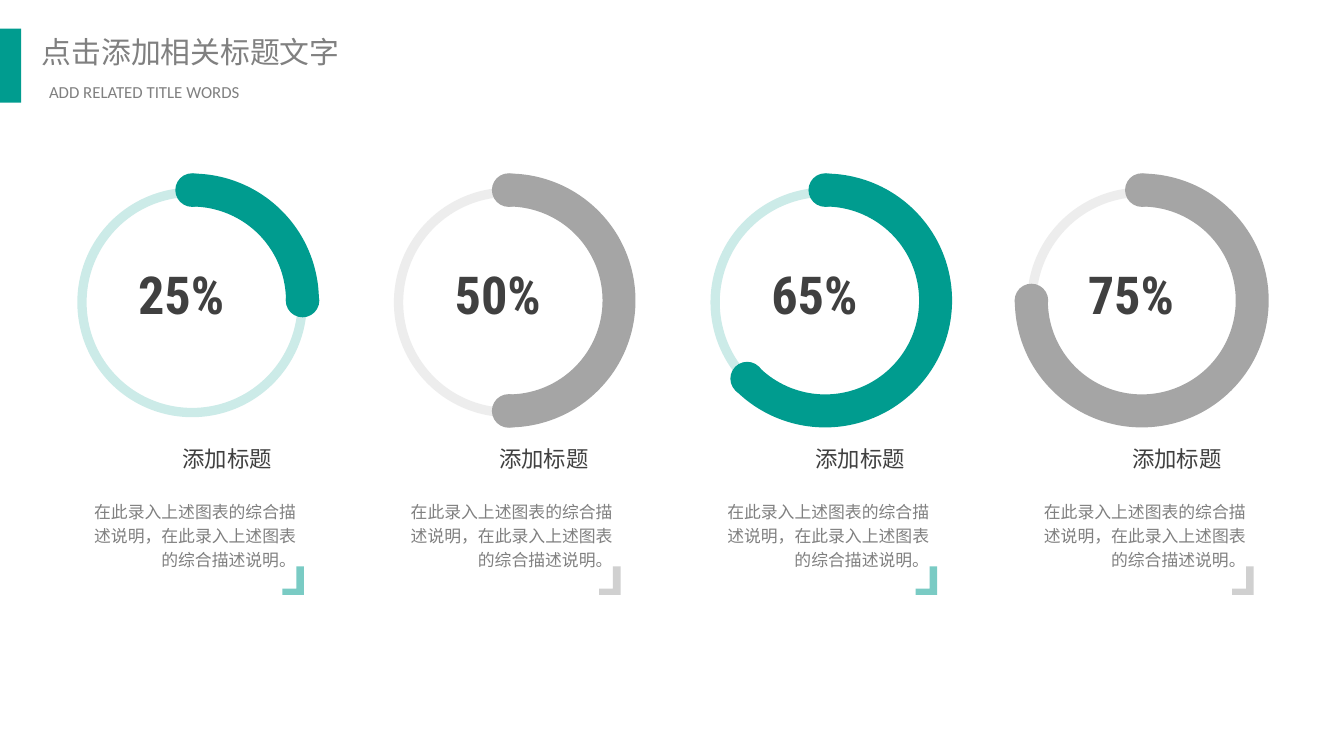
import math
from dataclasses import dataclass

import pptx
import pptx.dml.color
import pptx.enum.shapes
import pptx.enum.text
import pptx.oxml
import pptx.oxml.ns
import pptx.util

Pt = pptx.util.Pt
RGB = pptx.dml.color.RGBColor.from_string
SHAPE = pptx.enum.shapes.MSO_SHAPE
ALIGN = pptx.enum.text.PP_ALIGN
qn = pptx.oxml.ns.qn


@dataclass(frozen=True)
class Theme:
    teal: str = "009C8F"
    gray: str = "A5A5A5"
    dark: str = "404040"
    muted: str = "808080"
    chinese: str = "Noto Sans CJK SC"
    latin: str = "Calibri"
    number: str = "Roboto Condensed"
    title_size: float = 16
    number_size: float = 28
    heading_size: float = 12
    body_size: float = 9


def set_alpha(color_format_owner, percent):
    """Make every solid colour inside an XML element translucent."""
    for color in color_format_owner.iter(qn("a:srgbClr")):
        alpha = color.makeelement(qn("a:alpha"), {"val": str(percent * 1000)})
        color.append(alpha)


class SlideBuilder:
    def __init__(self, slide, theme):
        self.slide = slide
        self.theme = theme
        self.shapes = slide.shapes

    def start_group(self):
        self.shapes = self.slide.shapes.add_group_shape().shapes

    def end_group(self):
        self.shapes = self.slide.shapes

    def solid(self, kind, left, top, width, height, color, adjustments=(),
              alpha=None, rotation=0):
        shape = self.shapes.add_shape(kind, Pt(left), Pt(top), Pt(width), Pt(height))
        shape.shadow.inherit = False
        shape.rotation = rotation
        shape.fill.solid()
        shape.fill.fore_color.rgb = RGB(color)
        shape.line.fill.background()
        for index, value in enumerate(adjustments):
            shape.adjustments[index] = value
        if alpha is not None:
            set_alpha(shape.fill._xPr, alpha)

    def ring(self, center_x, center_y, diameter, color):
        shape = self.shapes.add_shape(
            SHAPE.OVAL, Pt(center_x - diameter / 2), Pt(center_y - diameter / 2),
            Pt(diameter), Pt(diameter))
        shape.shadow.inherit = False
        shape.fill.background()
        shape.line.width = Pt(5)
        shape.line.color.rgb = RGB(color)
        set_alpha(shape.line._get_or_add_ln(), 20)

    def arc(self, center_x, center_y, diameter, end_angle, color):
        """Thick clockwise arc from twelve o'clock with a round cap at each end."""
        thickness = 0.13
        start_angle = 270
        self.solid(SHAPE.BLOCK_ARC, center_x - diameter / 2, center_y - diameter / 2,
                   diameter, diameter, color,
                   (start_angle * 0.6, end_angle * 0.6, thickness))
        radius = diameter * (1 - thickness) / 2
        cap = 18
        for angle in (start_angle, end_angle):
            x = center_x + radius * math.cos(math.radians(angle))
            y = center_y + radius * math.sin(math.radians(angle))
            self.solid(SHAPE.OVAL, x - cap / 2, y - cap / 2, cap, cap, color)

    def text(self, words, left, top, width, height, size, color, font,
             bold=False, wrap=True, align=ALIGN.LEFT, spacing=None, insets=(7.2, 3.6)):
        box = self.shapes.add_textbox(Pt(left), Pt(top), Pt(width), Pt(height))
        frame = box.text_frame
        horizontal, vertical = map(Pt, insets)
        paragraph = frame.paragraphs[0]
        run = paragraph.add_run()
        formats = {
            frame: {"word_wrap": wrap, "margin_left": horizontal,
                    "margin_right": horizontal, "margin_top": vertical,
                    "margin_bottom": vertical,
                    "auto_size": pptx.enum.text.MSO_AUTO_SIZE.SHAPE_TO_FIT_TEXT},
            paragraph: {"alignment": align, "line_spacing": spacing},
            run: {"text": words},
            run.font: {"size": Pt(size), "bold": bold, "name": font},
        }
        for target, values in formats.items():
            for name, value in values.items():
                setattr(target, name, value)
        run.font.color.rgb = RGB(color)
        properties = run._r.get_or_add_rPr()
        east_asian = properties.makeelement(qn("a:ea"), {"typeface": font})
        properties.find(qn("a:latin")).addnext(east_asian)


def add_header(builder):
    theme = builder.theme
    builder.solid(SHAPE.RECTANGLE, 0, 15.4, 11.3, 39.6, theme.teal)
    builder.text("点击添加相关标题文字", 17, 15.4, 173, 25, theme.title_size,
                 theme.muted, theme.chinese, wrap=False, insets=(5.4, 2.7))
    builder.text("ADD RELATED TITLE WORDS", 20.9, 41, 160.6, 16.5, theme.body_size,
                 theme.muted, theme.latin, align=ALIGN.JUSTIFY, insets=(5.4, 2.7))


def add_gauge(builder, center, label, end_angle, color):
    theme = builder.theme

    # Gauge with its percentage
    builder.start_group()
    builder.ring(center, 162, 118, color)
    builder.arc(center, 161, 136, end_angle, color)
    builder.text(label, center - 36, 136.8, 71.3, 41, theme.number_size,
                 theme.dark, theme.number, bold=True, wrap=False)
    builder.end_group()

    # Caption and corner mark
    builder.text("添加标题", center - 13.5, 234.7, 63.4, 21.6, theme.heading_size,
                 theme.dark, theme.chinese, wrap=False, align=ALIGN.RIGHT)
    builder.text("在此录入上述图表的综合描述说明，在此录入上述图表的综合描述说明。",
                 center - 62, 262.8, 124.6, 46.8, theme.body_size, theme.muted,
                 theme.chinese, align=ALIGN.RIGHT, spacing=1.2)
    builder.solid(SHAPE.CORNER, center + 46.6, 305.3, 15.2, 11.5, color,
                  (0.35, 0.29), alpha=52, rotation=270)


def main():
    presentation = pptx.Presentation()
    presentation.slide_width = Pt(720)
    presentation.slide_height = Pt(405)
    slide = presentation.slides.add_slide(presentation.slide_layouts[6])
    theme = Theme()
    builder = SlideBuilder(slide, theme)

    add_header(builder)

    # Four gauges at equal distances
    first_center, pitch = 102.9, 169.6
    gauges = [("25%", 0, theme.teal), ("50%", 90, theme.gray),
              ("65%", 135, theme.teal), ("75%", 180, theme.gray)]
    for index, (label, end_angle, color) in enumerate(gauges):
        add_gauge(builder, first_center + index * pitch, label, end_angle, color)

    presentation.save("out.pptx")


if __name__ == "__main__":
    main()
